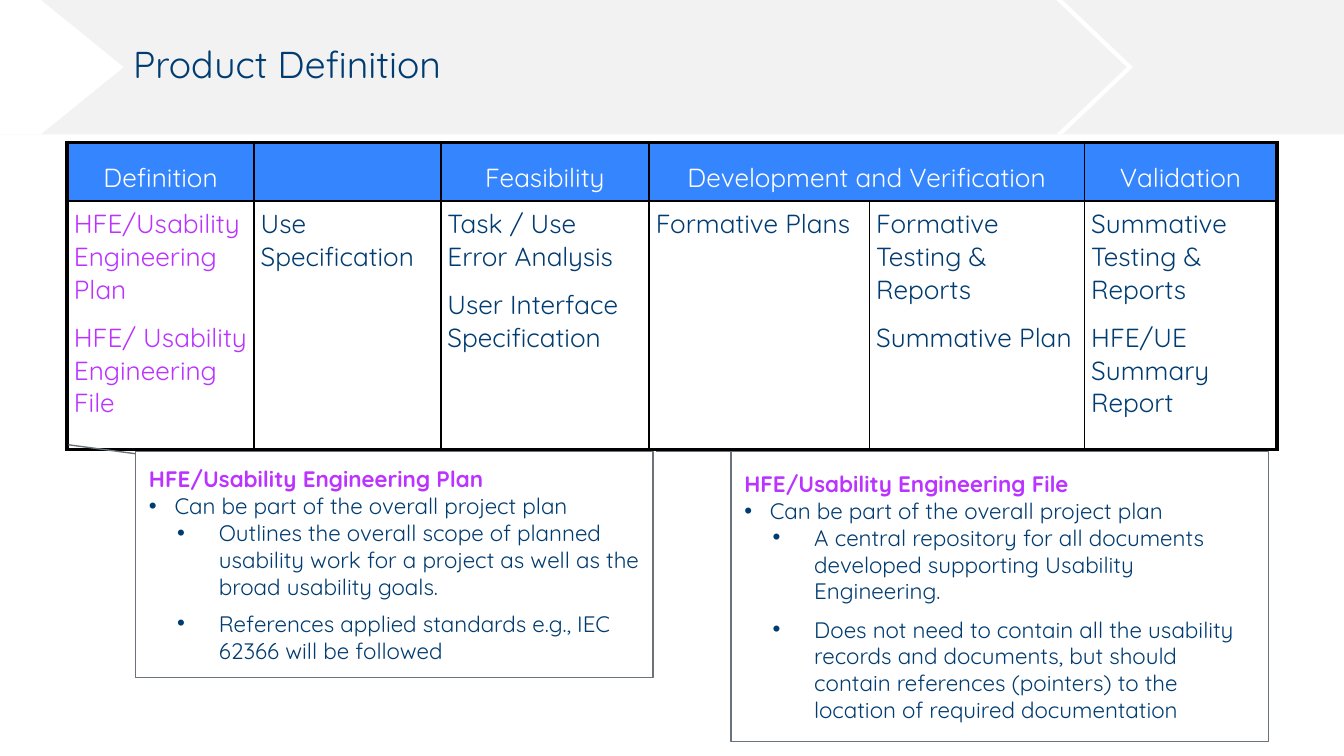
from lxml import etree
from pptx import Presentation
from pptx.dml.color import RGBColor
from pptx.enum.shapes import MSO_SHAPE
from pptx.enum.text import MSO_ANCHOR, PP_ALIGN
from pptx.oxml.ns import qn
from pptx.util import Inches, Pt

LEFT, CENTER = PP_ALIGN.LEFT, PP_ALIGN.CENTER
TOP, MIDDLE = MSO_ANCHOR.TOP, MSO_ANCHOR.MIDDLE
RECTANGLE, CHEVRON = MSO_SHAPE.RECTANGLE, MSO_SHAPE.CHEVRON
PENTAGON, CALLOUT = MSO_SHAPE.PENTAGON, MSO_SHAPE.LINE_CALLOUT_1

FONT = "Quicksand"
COLORS = {
    "band": "F2F2F2", "white": "FFFFFF", "navy": "003C71", "blue": "3485FE",
    "purple": "BB33FF", "gray": "6A737B", "black": "000000",
}
THIN, THICK = 1, 2.25

COLUMN_WIDTHS = [1.39, 1.39, 1.55, 1.64, 1.6, 1.43]
ROW_HEIGHTS = [0.43, 1.85]
PHASES = ["Definition", "", "Feasibility", "Development and Verification", "", "Validation"]
DELIVERABLES = [
    ["HFE/Usability Engineering Plan", "HFE/ Usability Engineering File"],
    ["Use Specification"],
    ["Task / Use Error Analysis", "User Interface Specification"],
    ["Formative Plans"],
    ["Formative Testing & Reports", "Summative Plan"],
    ["Summative Testing & Reports", "HFE/UE Summary Report"],
]
PLAN_POINTS = [
    "Outlines the overall scope of planned usability work for a project as well as the broad usability goals.",
    "References applied standards e.g., IEC 62366 will be followed",
]
FILE_POINTS = [
    "A central repository for all documents developed supporting Usability Engineering.",
    "Does not need to contain all the usability records and documents, but should contain "
    "references (pointers) to the location of required documentation",
]


def rgb(name):
    """Return the named colour."""
    return RGBColor.from_string(COLORS[name])


def add_run(paragraph, text, size, color, bold=False):
    """Add a formatted run to a paragraph."""
    run = paragraph.add_run()
    run.text = text
    run.font.name = FONT
    run.font.size = Pt(size)
    run.font.bold = bold
    run.font.color.rgb = rgb(color)


def next_paragraph(text_frame, index):
    """Return the first paragraph or a new one."""
    return text_frame.add_paragraph() if index else text_frame.paragraphs[0]


def add_bullet(paragraph, margin, indent):
    """Give a paragraph a hanging navy bullet."""
    properties = paragraph._p.get_or_add_pPr()
    properties.set("marL", str(Inches(margin)))
    properties.set("indent", str(Inches(indent)))
    color = etree.SubElement(properties, qn("a:buClr"))
    etree.SubElement(color, qn("a:srgbClr"), val=COLORS["navy"])
    etree.SubElement(properties, qn("a:buFont"), typeface="Arial")
    etree.SubElement(properties, qn("a:buChar"), char="•")


def add_panel(slide, kind, box, fill, adjustments=(), line=None):
    """Add a filled preset shape."""
    shape = slide.shapes.add_shape(kind, *map(Inches, box))
    shape.shadow.inherit = False
    shape.fill.solid()
    shape.fill.fore_color.rgb = rgb(fill)
    if line:
        shape.line.color.rgb = rgb(line)
        shape.line.width = Pt(0.75)
    else:
        shape.line.fill.background()
    for index, value in enumerate(adjustments):
        shape.adjustments[index] = value
    return shape


def format_title(slide, text):
    """Place the title and bring it in front of the banner."""
    title = slide.shapes.title
    title.left, title.top, title.width, title.height = map(Inches, (0.89, 0.22, 8.61, 0.55))
    title.text_frame.vertical_anchor = MIDDLE
    title.text_frame.word_wrap = True
    paragraph = title.text_frame.paragraphs[0]
    paragraph.alignment = LEFT
    paragraph.line_spacing = 0.9
    add_run(paragraph, text, 20, "navy")
    slide.shapes._spTree.append(title._element)


def set_borders(cell, widths):
    """Draw the left, right, top and bottom borders of a cell."""
    properties = cell._tc.get_or_add_tcPr()
    for index, (side, width) in enumerate(zip("LRTB", widths)):
        border = etree.Element(qn(f"a:ln{side}"), w=str(Pt(width)))
        fill = etree.SubElement(border, qn("a:solidFill"))
        etree.SubElement(fill, qn("a:srgbClr"), val=COLORS["black"])
        properties.insert(index, border)


def fill_cell(cell, texts, row, column):
    """Format one table cell and write its paragraphs."""
    header = row == 0
    cell.margin_left = cell.margin_right = cell.margin_top = cell.margin_bottom = Inches(0.05)
    cell.vertical_anchor = TOP
    cell.fill.solid()
    cell.fill.fore_color.rgb = rgb("blue" if header else "white")
    outer = (column == 0, column == len(COLUMN_WIDTHS) - 1, header, not header)
    set_borders(cell, [THICK if edge else THIN for edge in outer])
    color = "white" if header else "navy" if column else "purple"
    for index, text in enumerate(texts):
        paragraph = next_paragraph(cell.text_frame, index)
        if header:
            paragraph.alignment = CENTER
            paragraph.line_spacing = Pt(24)
        else:
            paragraph.space_after = Pt(8.4)
        add_run(paragraph, text, 14, color)


def add_phase_table(slide):
    """Add the table of phases and their deliverables."""
    frame = slide.shapes.add_table(
        len(ROW_HEIGHTS), len(COLUMN_WIDTHS), Inches(0.5), Inches(1.06),
        Inches(sum(COLUMN_WIDTHS)), Inches(sum(ROW_HEIGHTS)))
    table = frame.table
    table.first_row = table.horz_banding = False
    for column, width in zip(table.columns, COLUMN_WIDTHS):
        column.width = Inches(width)
    for row, height in zip(table.rows, ROW_HEIGHTS):
        row.height = Inches(height)
    table.cell(0, 3).merge(table.cell(0, 4))
    headings = [[phase] if phase else [] for phase in PHASES]
    for row, contents in enumerate([headings, DELIVERABLES]):
        for column, texts in enumerate(contents):
            fill_cell(table.cell(row, column), texts, row, column)


def add_callout(slide, box, adjustments, heading, points, gap):
    """Add a callout with a heading and two levels of bullets."""
    shape = add_panel(slide, CALLOUT, box, "white", adjustments, "gray")
    text_frame = shape.text_frame
    text_frame.word_wrap = True
    text_frame.vertical_anchor = MIDDLE
    lines = [heading, "Can be part of the overall project plan", *points]
    for index, text in enumerate(lines):
        paragraph = next_paragraph(text_frame, index)
        paragraph.alignment = LEFT
        if index == 1:
            add_bullet(paragraph, 0.19, -0.19)
        elif index > 1:
            paragraph.level = 1
            paragraph.space_after = Pt(gap)
            add_bullet(paragraph, 0.52, -0.31)
        add_run(paragraph, text, 12, "navy" if index else "purple", bold=index == 0)


def main():
    """Build the slide and save it."""
    presentation = Presentation()
    presentation.slide_width = Inches(10)
    presentation.slide_height = presentation.slide_width * 9 // 16
    slide = presentation.slides.add_slide(presentation.slide_layouts[5])
    add_panel(slide, RECTANGLE, (0, 0, 10, 1), "band")
    add_panel(slide, CHEVRON, (7.86, 0, 0.57, 1), "white", [0.92])
    add_panel(slide, PENTAGON, (0, 0, 0.92, 1), "white", [0.67])
    format_title(slide, "Product Definition")
    add_phase_table(slide)
    add_callout(slide, (1.01, 3.36, 3.85, 1.68), (0.01, 0, -0.03, -0.13),
                "HFE/Usability Engineering Plan", PLAN_POINTS, 5.4)
    add_callout(slide, (5.44, 3.36, 4, 2.16), (0, 0, 0, -0.14),
                "HFE/Usability Engineering File", FILE_POINTS, 6)
    presentation.save("out.pptx")


if __name__ == "__main__":
    main()
